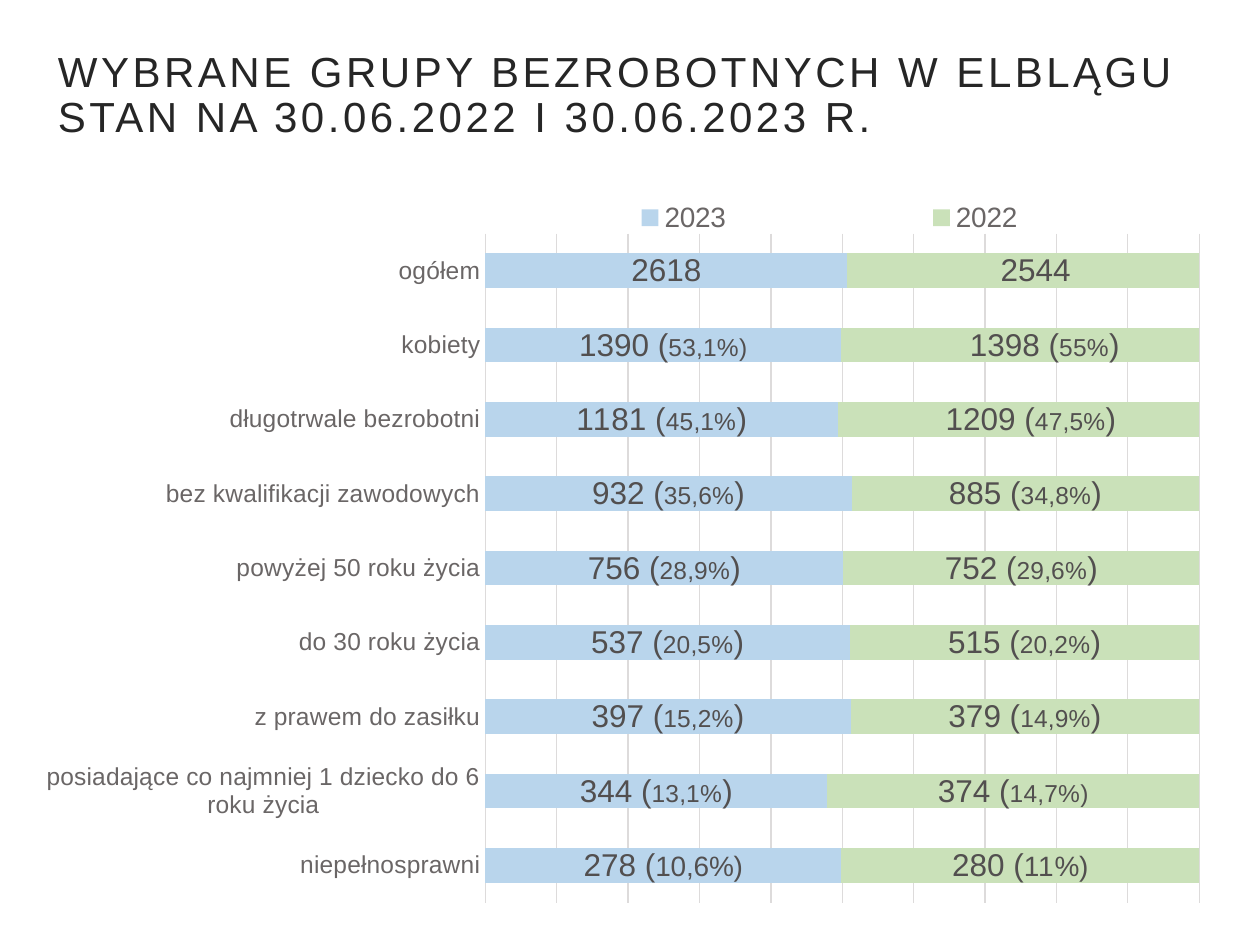
from dataclasses import dataclass

from lxml import etree
from pptx import Presentation
from pptx import util as u
from pptx.chart.data import CategoryChartData
from pptx.dml.color import RGBColor
from pptx.enum import chart as ch
from pptx.enum import text
from pptx.oxml.ns import qn

W, H = 10, 7.5
FONT = "Arial"
INK, GREY, LABEL, GRID = "262626", "6A6666", "524F4F", "DDDBDB"
TITLE = "WYBRANE GRUPY BEZROBOTNYCH W ELBLĄGU STAN NA 30.06.2022 I 30.06.2023 R."


@dataclass
class Label:
    """Share shown after the count; offsets are shares of the chart."""
    share: str = ""
    size: int = 14
    close: int = 18
    dx: float = 0
    dy: float = 0


@dataclass
class Group:
    name: str
    counts: tuple[int, int]
    labels: tuple[Label, Label]


@dataclass
class Year:
    name: str
    color: str


YEARS = [Year("2023", "B9D5EC"), Year("2022", "CAE1B9")]
GROUPS = [
    Group("niepełnosprawni", (278, 280),
          (Label("10,6%", 16, 16), Label("11%", 16, 16))),
    Group("posiadające co najmniej 1 dziecko do 6 roku życia", (344, 374),
          (Label("13,1%"), Label("14,7%", close=14))),
    Group("z prawem do zasiłku", (397, 379), (Label("15,2%"), Label("14,9%"))),
    Group("do 30 roku życia", (537, 515), (Label("20,5%"), Label("20,2%"))),
    Group("powyżej 50 roku życia", (756, 752), (Label("28,9%"), Label("29,6%"))),
    Group("bez kwalifikacji zawodowych", (932, 885), (Label("35,6%"), Label("34,8%"))),
    Group("długotrwale bezrobotni", (1181, 1209),
          (Label("45,1%"), Label("47,5%", dx=0.01))),
    Group("kobiety", (1390, 1398),
          (Label("53,1%", close=14), Label("55%", dx=0.02))),
    Group("ogółem", (2618, 2544), (Label(), Label(dx=0.01))),
]


def rgb(value: str) -> RGBColor:
    return RGBColor.from_string(value)


def style(font, size: float, color: str) -> None:
    for key, value in {"name": FONT, "size": u.Pt(size), "bold": False}.items():
        setattr(font, key, value)
    font.color.rgb = rgb(color)


def set_line(line, color: str, width: float) -> None:
    line.color.rgb = rgb(color)
    line.width = u.Pt(width)


def set_layout(parent, index: int, **values) -> None:
    """Insert a manual layout as the child at index of a chart element."""
    for old in parent.findall(qn("c:layout")):
        parent.remove(old)
    layout = etree.Element(qn("c:layout"))
    manual = etree.SubElement(layout, qn("c:manualLayout"))
    for tag, value in values.items():
        etree.SubElement(manual, qn(f"c:{tag}")).set("val", str(value))
    parent.insert(index, layout)


def add_title(s) -> None:
    box = s.shapes.add_textbox(u.Inches(0.16), u.Inches(0.22), u.Inches(9.69), u.Inches(1.09))
    tf = box.text_frame
    margins = {f"margin_{side}": u.Inches(0.2) for side in ("left", "right", "top", "bottom")}
    for key, value in {"word_wrap": True, "vertical_anchor": text.MSO_ANCHOR.MIDDLE,
                       **margins}.items():
        setattr(tf, key, value)
    p = tf.paragraphs[0]
    p.line_spacing = 0.9
    p._p.get_or_add_pPr().set("marL", str(u.Inches(0.1)))
    r = p.add_run()
    r.text = TITLE
    style(r.font, 24, INK)
    r.font._element.set("spc", "200")


def label_point(series, index: int, count: int, label: Label) -> None:
    p = series.points[index].data_label.text_frame.paragraphs[0]
    parts = [(str(count), 18)]
    if label.share:
        parts = [(f"{count} (", 18), (label.share, label.size), (")", label.close)]
    for words, size in parts:
        r = p.add_run()
        r.text = words
        style(r.font, size, LABEL)
    if label.dx or label.dy:
        element = series._element.xpath(f"c:dLbls/c:dLbl[c:idx/@val='{index}']")[0]
        set_layout(element, 1, x=label.dx, y=label.dy)


def add_group_chart(s) -> None:
    data = CategoryChartData()
    data.categories = [g.name for g in GROUPS]
    for i, year in enumerate(YEARS):
        data.add_series(year.name, [g.counts[i] for g in GROUPS])
    chart = s.shapes.add_chart(
        ch.XL_CHART_TYPE.BAR_STACKED_100, u.Inches(0.12), u.Inches(1.31),
        u.Inches(9.72), u.Inches(5.98), data).chart
    chart.has_title = False
    style(chart.font, 10, "171616")

    chart.has_legend = True
    legend = chart.legend
    legend.position = ch.XL_LEGEND_POSITION.BOTTOM
    legend.include_in_layout = False
    style(legend.font, 16, GREY)
    set_layout(legend._element, 1, xMode="edge", yMode="edge", x=0.35, y=0.04, w=0.63, h=0.06)

    axis = chart.category_axis
    for key, value in {"major_tick_mark": ch.XL_TICK_MARK.NONE,
                       "minor_tick_mark": ch.XL_TICK_MARK.NONE,
                       "has_major_gridlines": False}.items():
        setattr(axis, key, value)
    style(axis.tick_labels.font, 14, GREY)
    set_line(axis.format.line, GRID, 1)

    values = chart.value_axis
    for key, value in {"visible": False, "has_major_gridlines": True,
                       "major_unit": 0.1}.items():
        setattr(values, key, value)
    set_line(values.major_gridlines.format.line, GRID, 0.75)

    plot = chart.plots[0]
    for key, value in {"gap_width": 115, "overlap": 100, "vary_by_categories": False}.items():
        setattr(plot, key, value)
    set_layout(chart._chartSpace.chart.plotArea, 0, layoutTarget="inner", xMode="edge",
               yMode="edge", x=0.384, y=0.091, w=0.583, h=0.888)

    for i, (series, year) in enumerate(zip(plot.series, YEARS)):
        series.format.fill.solid()
        series.format.fill.fore_color.rgb = rgb(year.color)
        series.data_labels.show_value = True
        style(series.data_labels.font, 18, LABEL)
        for row, group in enumerate(GROUPS):
            label_point(series, row, group.counts[i], group.labels[i])


def main() -> None:
    prs = Presentation()
    prs.slide_width, prs.slide_height = u.Inches(W), u.Inches(H)
    s = prs.slides.add_slide(prs.slide_layouts[6])
    add_title(s)
    add_group_chart(s)
    prs.save("out.pptx")


if __name__ == "__main__":
    main()
